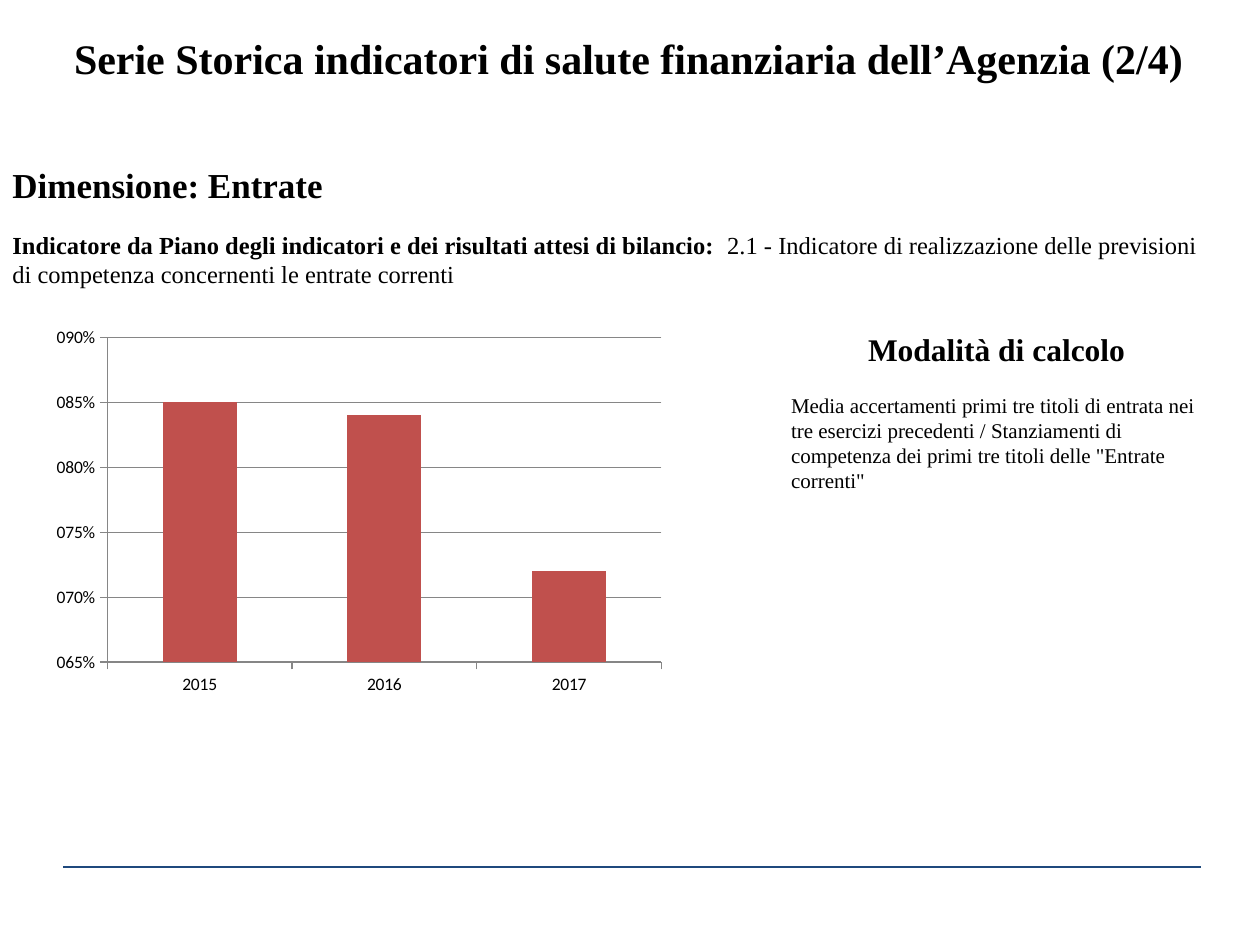
from dataclasses import dataclass

from lxml import etree
from pptx import Presentation
from pptx.chart.data import CategoryChartData
from pptx.dml.color import RGBColor as Color
from pptx.enum.chart import XL_CHART_TYPE as ChartType, XL_TICK_MARK as TickMark
from pptx.enum.shapes import MSO_CONNECTOR as Connector
from pptx.enum.text import MSO_ANCHOR as Anchor, PP_ALIGN as Align
from pptx.oxml.ns import qn
from pptx.util import Inches, Pt


@dataclass(frozen=True)
class Theme:
    text_font: str = "Times New Roman"
    chart_font: str = "Calibri"
    text: Color = Color(0, 0, 0)
    rule: Color = Color(0x1F, 0x49, 0x7D)
    bar: Color = Color(0xC0, 0x50, 0x4D)
    grid: Color = Color(0x86, 0x86, 0x86)
    title: int = 24
    dimension: int = 20
    heading: int = 18
    indicator: int = 14
    body: int = 12
    axis: int = 10
    gap: int = 14


class SlideBuilder:
    def __init__(self, slide, theme):
        self.slide = slide
        self.theme = theme

    def text(self, left, top, width, height, paragraphs, anchor=Anchor.TOP):
        box = self.slide.shapes.add_textbox(
            Inches(left), Inches(top), Inches(width), Inches(height))
        frame = box.text_frame
        frame.word_wrap = True
        frame.vertical_anchor = anchor
        for index, (alignment, size, runs) in enumerate(paragraphs):
            paragraph = frame.paragraphs[0] if index == 0 else frame.add_paragraph()
            paragraph.alignment = alignment
            if index:
                paragraph.space_before = Pt(self.theme.gap)
            for words, bold in runs:
                run = paragraph.add_run()
                run.text = words
                run.font.name = self.theme.text_font
                run.font.size = Pt(size)
                run.font.bold = bold
                run.font.color.rgb = self.theme.text

    def rule(self, left, right, top):
        line = self.slide.shapes.add_connector(
            Connector.STRAIGHT, Inches(left), Inches(top), Inches(right), Inches(top))
        line.line.color.rgb = self.theme.rule
        line.line.width = Pt(1.5)
        etree.SubElement(line._element.spPr, qn("a:effectLst"))

    def column_chart(self, left, top, width, height, categories, values):
        data = CategoryChartData()
        data.categories = categories
        data.add_series("Series 1", values)
        chart = self.slide.shapes.add_chart(
            ChartType.COLUMN_CLUSTERED, Inches(left), Inches(top),
            Inches(width), Inches(height), data).chart
        chart.has_legend = False
        chart.has_title = False
        chart.font.name = self.theme.chart_font
        chart.font.size = Pt(self.theme.axis)
        chart.font.color.rgb = self.theme.text

        plot = chart.plots[0]
        plot.gap_width = 150
        plot.vary_by_categories = False
        fill = plot.series[0].format.fill
        fill.solid()
        fill.fore_color.rgb = self.theme.bar

        value_axis = chart.value_axis
        value_axis.minimum_scale = 0.65
        value_axis.maximum_scale = 0.9
        value_axis.major_unit = 0.05
        value_axis.has_major_gridlines = True
        value_axis.tick_labels.number_format = "#,000%"
        value_axis.tick_labels.number_format_is_linked = False
        for axis in (chart.category_axis, value_axis):
            axis.major_tick_mark = TickMark.OUTSIDE
        for part in (chart.category_axis, value_axis, value_axis.major_gridlines):
            part.format.line.color.rgb = self.theme.grid
            part.format.line.width = Pt(0.75)


def main():
    presentation = Presentation()
    presentation.slide_width = Inches(10)
    presentation.slide_height = Inches(7.5)
    theme = Theme()
    builder = SlideBuilder(
        presentation.slides.add_slide(presentation.slide_layouts[6]), theme)

    builder.rule(0.5, 9.53, 6.88)
    builder.text(0, 1.24, 9.65, 1.11, [
        (Align.LEFT, theme.dimension, [("Dimensione: Entrate", True)]),
        (Align.LEFT, theme.indicator, [
            ("Indicatore da Piano degli indicatori e dei risultati attesi di bilancio:  ", True),
            ("2.1 - Indicatore di realizzazione delle previsioni di competenza "
             "concernenti le entrate correnti", False),
        ]),
    ], Anchor.MIDDLE)
    builder.text(6.18, 2.57, 3.46, 1.41, [
        (Align.CENTER, theme.heading, [("Modalità di calcolo", True)]),
        (Align.LEFT, theme.body, [
            ("Media accertamenti primi tre titoli di entrata nei tre esercizi precedenti / "
             "Stanziamenti di competenza dei primi tre titoli delle \"Entrate correnti\"", False),
        ]),
    ])
    builder.text(0.1, 0.21, 9.78, 0.81, [
        (Align.CENTER, theme.title, [
            ("Serie Storica indicatori di salute finanziaria dell’Agenzia (2/4)", True),
        ]),
    ])
    builder.column_chart(0.35, 2.54, 5, 3.03, ["2015", "2016", "2017"], [0.85, 0.84, 0.72])

    presentation.save("out.pptx")


if __name__ == "__main__":
    main()
